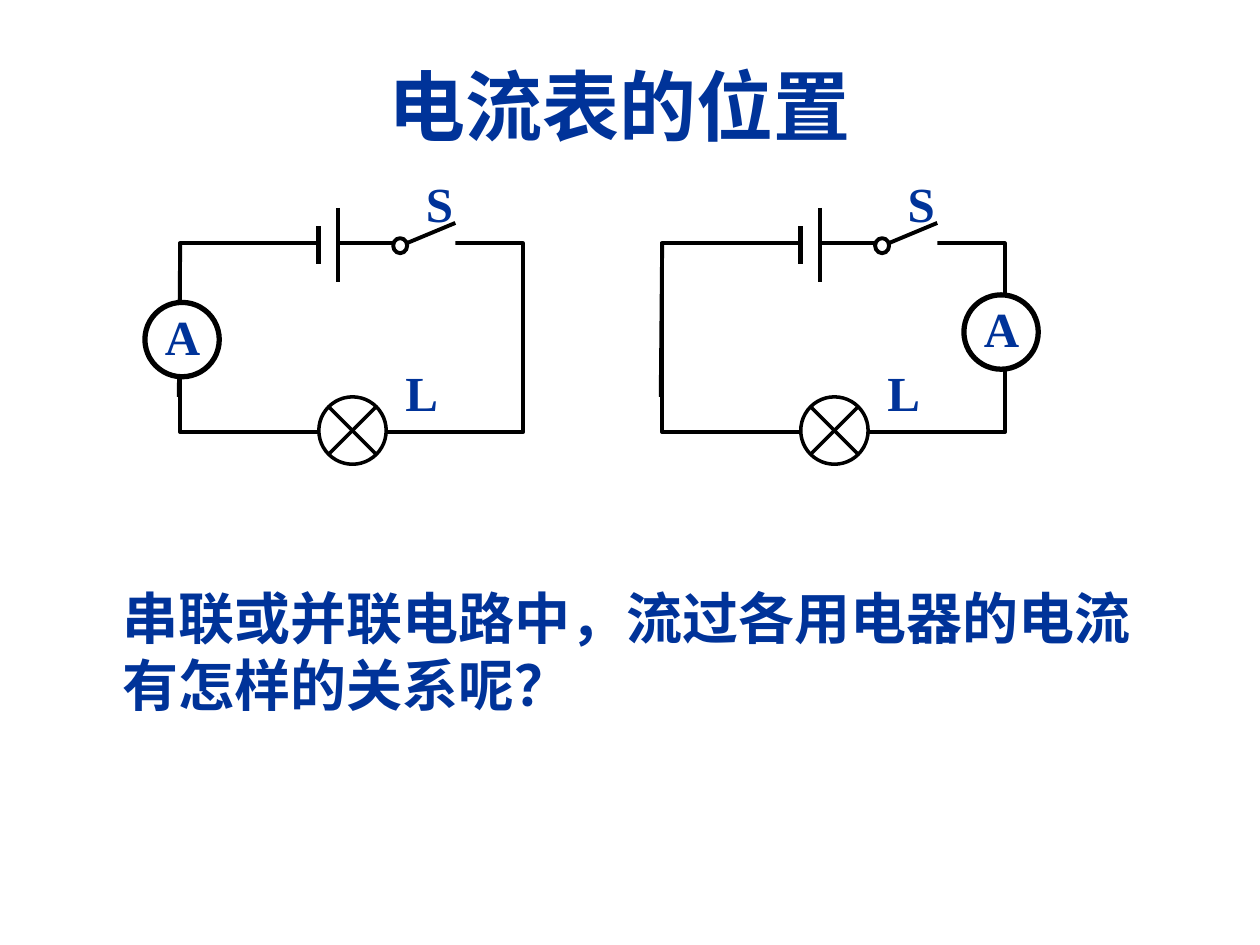
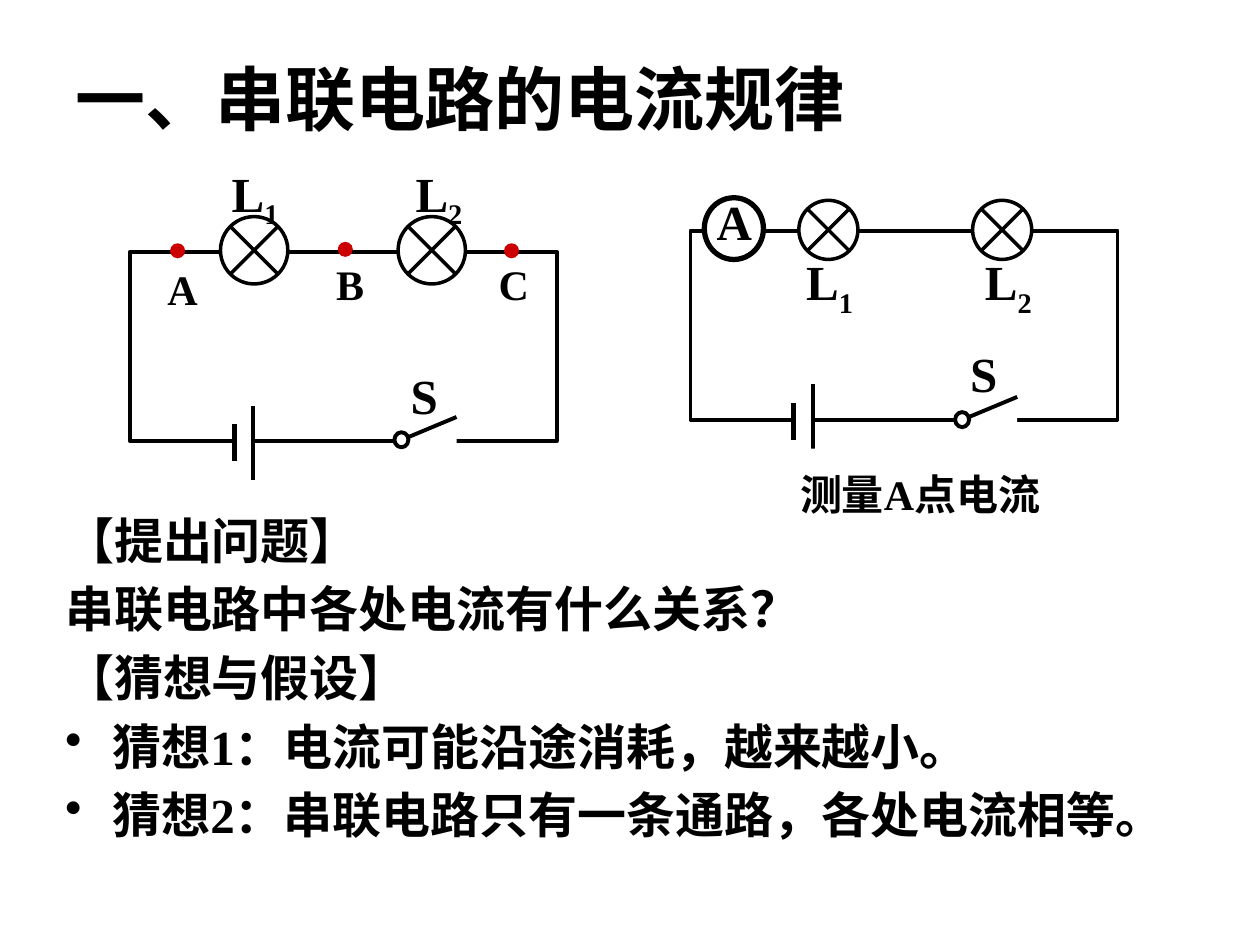
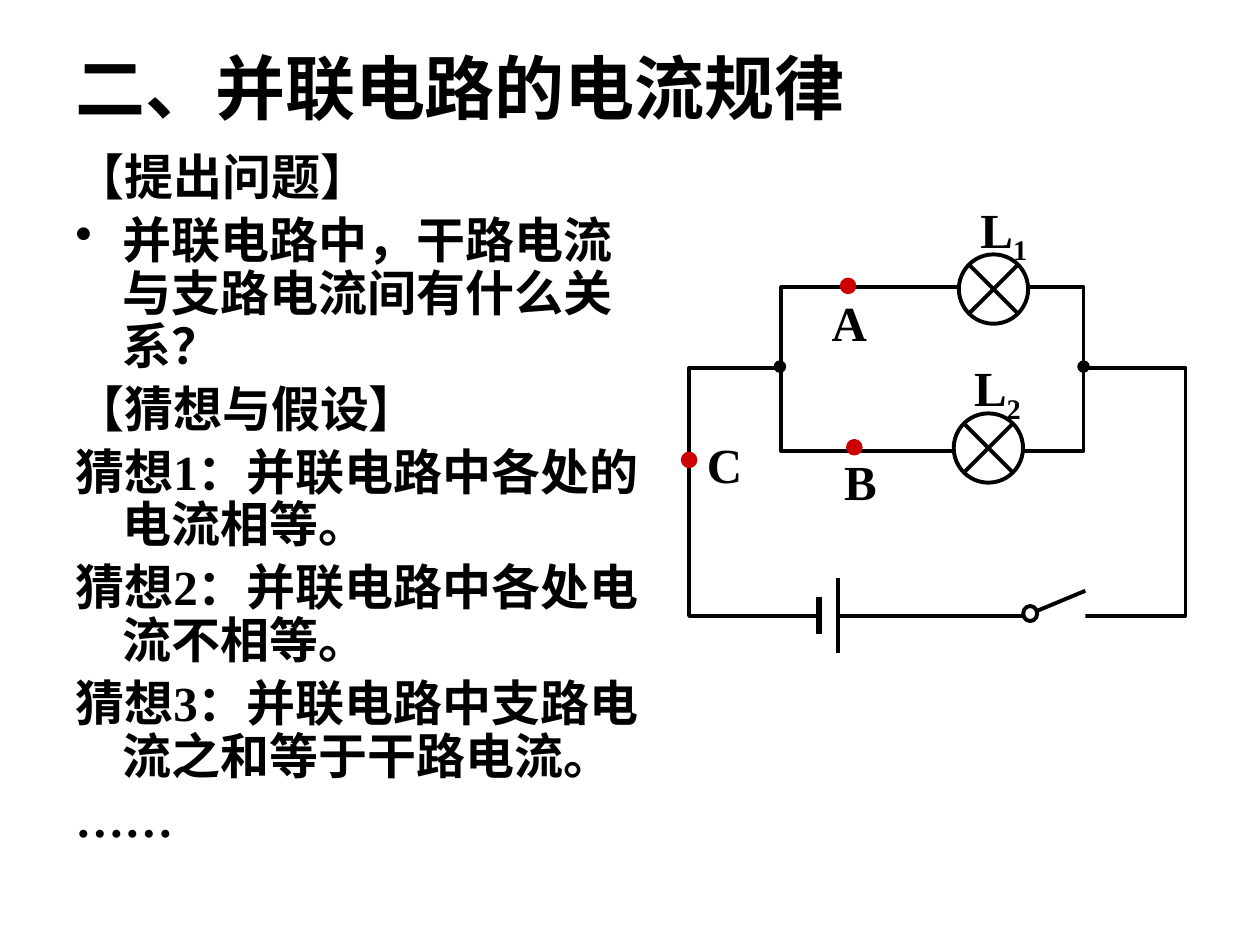
from dataclasses import dataclass
from typing import NamedTuple

from lxml.etree import SubElement
from pptx import Presentation
from pptx.dml.color import RGBColor
from pptx.enum.shapes import MSO_CONNECTOR, MSO_SHAPE as Form
from pptx.enum.text import MSO_ANCHOR as Anchor, MSO_AUTO_SIZE as Fit, PP_ALIGN as Align
from pptx.oxml.ns import qn
from pptx.util import Pt

FONT = "Times New Roman"
BLUE, BLACK, WHITE, RED = "003399", "000000", "FFFFFF", "CC0000"
WIRE, THICK, THIN = 2.25, 3, 2
HANG = 27


class Wire(NamedTuple):
    x: float
    y: float
    w: float
    h: float
    fill: str = ""


class Lamp(NamedTuple):
    x: float
    y: float
    size: float = 38.5
    line: float = THIN


class Meter(NamedTuple):
    x: float
    y: float
    w: float = 42.5
    h: float = 42.5


class Dot(NamedTuple):
    x: float
    y: float
    size: float = 8.6
    color: str = RED
    edge: float = 0


class Tag(NamedTuple):
    text: str
    x: float
    y: float
    w: float
    sub: str = ""
    size: float = 28
    wrap: bool = False
    pad: bool = True


class Item(NamedTuple):
    text: str
    bullet: bool = False


class Spot(NamedTuple):
    x: float
    y: float


@dataclass(frozen=True)
class Circuit:
    wires: tuple[Wire, ...]
    lamps: tuple[Lamp, ...]
    switch: Spot
    cell: Spot
    tags: tuple[Tag, ...]
    meters: tuple[Meter, ...] = ()
    dots: tuple[Dot, ...] = ()
    color: str = BLACK


def rgb(color: str) -> RGBColor:
    return RGBColor.from_string(color)


def style(run, size: float, color: str) -> None:
    font = run.font
    font.name, font.size, font.bold = FONT, Pt(size), True
    font.color.rgb = rgb(color)


def shape(slide, form, x: float, y: float, w: float, h: float,
          fill: str = "", line: float = 0, color: str = BLACK):
    new = slide.shapes.add_shape(form, Pt(x), Pt(y), Pt(w), Pt(h))
    new.shadow.inherit = False
    if fill:
        new.fill.solid()
        new.fill.fore_color.rgb = rgb(fill)
    else:
        new.fill.background()
    if line:
        new.line.width = Pt(line)
        new.line.color.rgb = rgb(color)
    else:
        new.line.fill.background()
    return new


def stroke(slide, x1: float, y1: float, x2: float, y2: float, width: float = WIRE) -> None:
    new = slide.shapes.add_connector(MSO_CONNECTOR.STRAIGHT, Pt(x1), Pt(y1), Pt(x2), Pt(y2))
    new.line.width = Pt(width)
    new.line.color.rgb = rgb(BLACK)
    SubElement(new._element.spPr, qn("a:effectLst"))


def frame(slide, x: float, y: float, w: float, h: float):
    """Add a wrapping text box and return its text frame."""
    text = slide.shapes.add_textbox(Pt(x), Pt(y), Pt(w), Pt(h)).text_frame
    text.word_wrap = True
    return text


def title(slide, text: str, x: float, y: float, h: float, size: float = 40,
          color: str = BLACK, align=Align.LEFT) -> None:
    box = frame(slide, x, y, 648, h)
    box.vertical_anchor = Anchor.MIDDLE
    box.text = text
    box.paragraphs[0].alignment = align
    style(box.paragraphs[0].runs[0], size, color)


def body(slide, items: list[Item], x: float, y: float, w: float, h: float,
         size: float = 28, color: str = BLACK, space: float = 1, hang: float = HANG) -> None:
    box = frame(slide, x, y, w, h)
    box.text = "\n".join(item.text for item in items)
    for i, (para, item) in enumerate(zip(box.paragraphs, items)):
        props = para._p.get_or_add_pPr()
        props.set("marL", str(Pt(HANG)))
        props.set("indent", str(-Pt(hang)))
        if item.bullet:
            SubElement(props, qn("a:buChar")).set("char", "•")
        para.line_spacing = space
        if i:
            para.space_before = Pt(size * 0.2)
        style(para.runs[0], size, color)


def label(slide, tag: Tag, color: str) -> None:
    pad = 7.2 if tag.pad else 0
    box = frame(slide, tag.x, tag.y, tag.w, tag.size * 1.21 + pad)
    box.word_wrap = tag.wrap
    box.auto_size = Fit.SHAPE_TO_FIT_TEXT
    if not tag.pad:
        box.margin_left = box.margin_right = box.margin_top = box.margin_bottom = 0
    box.text = tag.text
    para = box.paragraphs[0]
    if tag.sub:
        low = para.add_run()
        low.text = tag.sub
        low._r.get_or_add_rPr().set("baseline", "-25000")
    for run in para.runs:
        style(run, tag.size, color)


def switch(slide, x: float, y: float) -> None:
    """Draw an open switch that pivots at x, y."""
    shape(slide, Form.RECTANGLE, x, y - 13, 31.2, 21.6, WHITE)
    stroke(slide, x, y, x + 31.2, y - 13)
    shape(slide, Form.OVAL, x - 4.3, y - 4.3, 8, 8.6, WHITE, WIRE)


def cell(slide, x: float, y: float) -> None:
    """Draw a battery cell with its short plate centred at x, y."""
    gap = 10.8
    shape(slide, Form.RECTANGLE, x, y - gap / 2, gap, gap, WHITE)
    stroke(slide, x + gap, y - 21.2, x + gap, y + 21.2)
    stroke(slide, x, y - 10.6, x, y + 10.6, THICK)


def draw(slide, plan: Circuit) -> None:
    for wire in plan.wires:
        shape(slide, Form.RECTANGLE, *wire, line=WIRE)
    for x, y, size, line in plan.lamps:
        shape(slide, Form.FLOWCHART_SUMMING_JUNCTION, x, y, size, size, WHITE, line)
    switch(slide, *plan.switch)
    cell(slide, *plan.cell)
    for meter in plan.meters:
        shape(slide, Form.OVAL, *meter, fill=WHITE, line=THICK)
    for x, y, size, color, edge in plan.dots:
        shape(slide, Form.OVAL, x, y, size, size, color, edge, color)
    for tag in plan.tags:
        label(slide, tag, plan.color)


def meters(slide) -> None:
    title(slide, "电流表的位置", 30.2, 23.8, 72, 44, BLUE, Align.CENTER)
    for dx, meter in ((0, Meter(82.8, 172.8)), (275.4, Meter(550.8, 168.5))):
        stroke(slide, dx + 102.2, 226.8, dx + 103, 138.2)
        draw(slide, Circuit(
            wires=(Wire(dx + 103, 139, 195.8, 108),),
            lamps=(Lamp(dx + 182.2, 226.8),),
            switch=Spot(dx + 229, 140.4),
            cell=Spot(dx + 182.2, 140),
            meters=(meter,),
            tags=(Tag("S", dx + 236.2, 95.8, 30.2),
                  Tag("L", dx + 224.6, 203.8, 33.1),
                  Tag("A", meter.x + 4.3, meter.y - 1.4, 36, wrap=True)),
            color=BLUE))
    body(slide, [Item("串联或并联电路中，流过各用电器的电流有怎样的关系呢？")],
         36, 329.8, 648, 152.6, 32, BLUE, hang=0)


def series(slide) -> None:
    title(slide, "一、串联电路的电流规律", 36, 21.6, 68.4)
    body(slide, [Item("【提出问题】"),
                 Item("串联电路中各处电流有什么关系？"),
                 Item("【猜想与假设】"),
                 Item("猜想1：电流可能沿途消耗，越来越小。", True),
                 Item("猜想2：串联电路只有一条通路，各处电流相等。", True)],
         30.2, 288, 660.2, 221.8)
    draw(slide, Circuit(
        wires=(Wire(74.2, 144, 244, 108),),
        lamps=(Lamp(126, 123.8), Lamp(227.5, 123.8)),
        switch=Spot(229.7, 251.3),
        cell=Spot(133.9, 253),
        dots=(Dot(97.2, 139), Dot(193, 138.2), Dot(288, 139)),
        tags=(Tag("S", 227.5, 205.2, 30.2),
              Tag("L", 125.3, 90, 43.2, "1"),
              Tag("L", 230.4, 90, 43.2, "2"),
              Tag("A", 88.6, 146.9, 32.4, size=24),
              Tag("B", 185, 144, 31, size=24),
              Tag("C", 277.9, 144, 32.4, size=24))))
    draw(slide, Circuit(
        wires=(Wire(394.6, 131.8, 244, 108),),
        lamps=(Lamp(456.5, 114.5, 33.8), Lamp(555.8, 114.5, 33.8)),
        switch=Spot(550.1, 239.8),
        cell=Spot(453.6, 240.8),
        meters=(Meter(402.5, 113, 33.8, 35.3),),
        tags=(Tag("S", 547.2, 193, 30.2),
              Tag("L", 453.6, 140.4, 43.2, "1"),
              Tag("L", 555.8, 140.4, 43.2, "2"),
              Tag("A", 402.5, 105.8, 28.8, wrap=True))))
    note = shape(slide, Form.ROUNDED_RECTANGLE, 447.8, 256.3, 167, 46.8, WHITE).text_frame
    note.word_wrap = True
    note.auto_size = Fit.SHAPE_TO_FIT_TEXT
    note.vertical_anchor = Anchor.TOP
    note.text = "测量A点电流"
    para = note.paragraphs[0]
    para.alignment = Align.LEFT
    para.line_spacing = 1.2
    style(para.runs[0], 24, BLACK)


def branches(slide) -> None:
    title(slide, "二、并联电路的电流规律", 36, 21.6, 56.2)
    body(slide, [Item("【提出问题】"),
                 Item("并联电路中，干路电流与支路电流间有什么关系？", True),
                 Item("【猜想与假设】"),
                 Item("猜想1：并联电路中各处的电流相等。"),
                 Item("猜想2：并联电路中各处电流不相等。"),
                 Item("猜想3：并联电路中支路电流之和等于干路电流。"),
                 Item("……")],
         36, 84.2, 342, 426.2, space=0.9)
    points = ((481, 159.8), (484.6, 252), (390.2, 259.2))
    nodes = ((442.1, 205.9), (615.6, 205.9))
    names = (("L", 560.2, 113.8, 46, "1"), ("L", 556.6, 204.5, 42.5, "2"),
             ("A", 475.2, 167, 28), ("B", 482.4, 257.8, 28), ("C", 403.9, 248.4, 28))
    draw(slide, Circuit(
        wires=(Wire(393.8, 210.2, 283.7, 141.8), Wire(446.4, 164.2, 172.8, 93.6, WHITE)),
        lamps=(Lamp(547.9, 145.4, 39.6, WIRE), Lamp(545, 236.2, 39.6, WIRE)),
        switch=Spot(589, 350.6),
        cell=Spot(468, 351.7),
        dots=(*(Dot(x, y, 7.2, RED, WIRE) for x, y in points),
              *(Dot(x, y, 7.2, BLACK) for x, y in nodes)),
        tags=tuple(Tag(*name, wrap=True, pad=False) for name in names)))


def main() -> None:
    deck = Presentation()
    deck.slide_width, deck.slide_height = Pt(720), Pt(540)
    for build in (meters, series, branches):
        build(deck.slides.add_slide(deck.slide_layouts[6]))
    deck.save("out.pptx")


if __name__ == "__main__":
    main()
